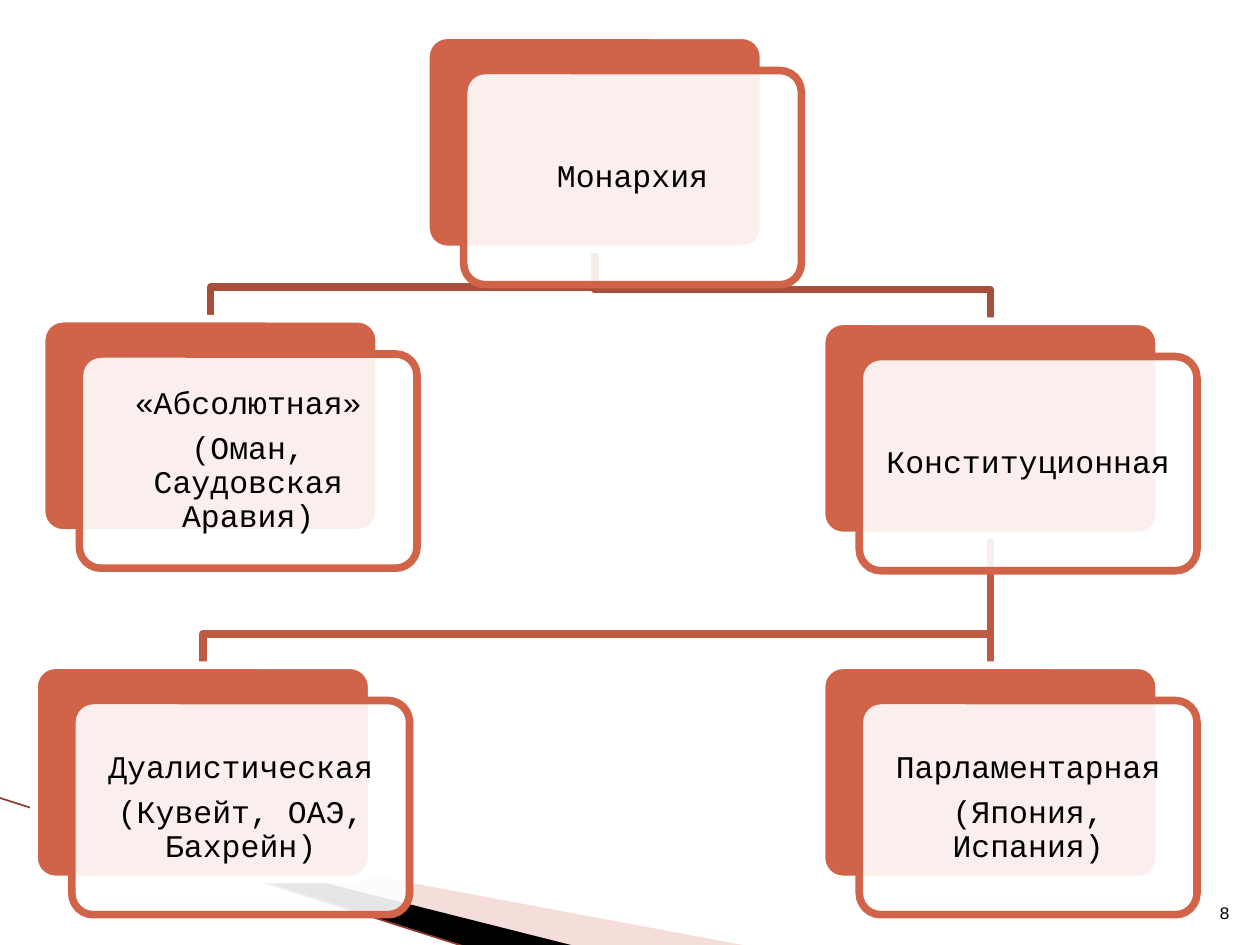
from lxml import etree
from pptx import Presentation
from pptx.dml.color import RGBColor
from pptx.enum.shapes import MSO_CONNECTOR, MSO_SHAPE
from pptx.enum.text import MSO_ANCHOR, PP_ALIGN
from pptx.oxml.ns import qn
from pptx.util import Inches, Pt

ROUNDED = MSO_SHAPE.ROUNDED_RECTANGLE
STRAIGHT = MSO_CONNECTOR.STRAIGHT
MIDDLE, BOTTOM = MSO_ANCHOR.MIDDLE, MSO_ANCHOR.BOTTOM
CENTER, RIGHT = PP_ALIGN.CENTER, PP_ALIGN.RIGHT

COLORS = {
    "card": "D16349", "white": "FFFFFF", "text": "000000", "black": "000000",
    "upper_link": "A74F3A", "lower_link": "BE5A42",
    "pink": "E7ACA4", "stripe": "8F3A2B",
}
FONT = "Courier New"
CARD_WIDTH, CARD_HEIGHT = 2.68, 1.7
SHIFT_X, SHIFT_Y = 0.3, 0.28
BEND_RISE = 0.25
LINK_WIDTH = 4.33

CARDS = {
    "monarchy": (3.38, 0.28, ["Монархия"]),
    "constitutional": (6.52, 2.55, ["Конституционная"]),
    "dualistic": (0.27, 5.28, ["Дуалистическая", "(Кувейт, ОАЭ, Бахрейн)"]),
    "parliamentary": (6.52, 5.28, ["Парламентарная", "(Япония, Испания)"]),
    "absolute": (0.33, 2.53, ["«Абсолютная»", "(Оман, Саудовская Аравия)"]),
}
BENT_LINKS = [
    ("monarchy", "absolute", "upper_link"),
    ("constitutional", "dualistic", "lower_link"),
    ("monarchy", "constitutional", "upper_link"),
]


def paint(fill, color, opacity=100):
    """Give a fill a solid colour with an opacity in percent."""
    fill.solid()
    fill.fore_color.rgb = RGBColor.from_string(COLORS[color])
    if opacity < 100:
        tint = fill._xPr.find(qn("a:solidFill"))[0]
        etree.SubElement(tint, qn("a:alpha"), val=str(opacity * 1000))


def set_line(shape, color, width):
    """Set the colour and width in points of an outline or a line."""
    shape.line.color.rgb = RGBColor.from_string(COLORS[color])
    shape.line.width = Pt(width)


def write_text(shape, lines, size=18, align=CENTER, anchor=MIDDLE, inset=0.02,
               spacing=0.9, after=6.3):
    """Fill a shape with one paragraph for each line."""
    frame = shape.text_frame
    frame.word_wrap = True
    frame.vertical_anchor = anchor
    frame.margin_left = frame.margin_right = Inches(inset)
    frame.margin_top = frame.margin_bottom = Inches(inset)
    for index, line in enumerate(lines):
        para = frame.paragraphs[0] if index == 0 else frame.add_paragraph()
        para.alignment = align
        para.line_spacing = spacing
        para.space_after = Pt(after)
        span = para.add_run()
        span.text = line
        span.font.name = FONT
        span.font.size = Pt(size)
        span.font.color.rgb = RGBColor.from_string(COLORS["text"])


def add_outline(page, points, close):
    """Draw a freeform through points given in inches."""
    corners = [(Inches(x), Inches(y)) for x, y in points]
    builder = page.shapes.build_freeform(*corners[0])
    builder.add_line_segments(corners[1:], close=close)
    shape = builder.convert_to_shape()
    shape.shadow.inherit = False
    return shape


def add_wedge(page, points, color, opacity=100):
    """Draw a filled corner wedge without an outline."""
    wedge = add_outline(page, points, True)
    paint(wedge.fill, color, opacity)
    wedge.line.fill.background()


def add_straight(page, start, end, color, width):
    """Draw a straight connector without a shadow."""
    ends = [Inches(value) for value in (*start, *end)]
    connector = page.shapes.add_connector(STRAIGHT, *ends)
    set_line(connector, color, width)
    etree.SubElement(connector._element.spPr, qn("a:effectLst"))
    return connector


def add_bent_link(page, parent, child, color):
    """Draw a bent link from the bottom of a card to the top of another."""
    parent_left, parent_top, _ = CARDS[parent]
    child_left, child_top, _ = CARDS[child]
    start_x, end_x = parent_left + CARD_WIDTH / 2, child_left + CARD_WIDTH / 2
    bend = child_top - BEND_RISE
    points = [(start_x, parent_top + CARD_HEIGHT), (start_x, bend),
              (end_x, bend), (end_x, child_top)]
    link = add_outline(page, points, False)
    link.fill.background()
    set_line(link, color, LINK_WIDTH)


def add_panel(page, left, top, fill, line, opacity=100):
    """Draw one rounded panel of a card."""
    panel = page.shapes.add_shape(ROUNDED, Inches(left), Inches(top),
                                  Inches(CARD_WIDTH), Inches(CARD_HEIGHT))
    panel.adjustments[0] = 0.1
    panel.shadow.inherit = False
    paint(panel.fill, fill, opacity)
    set_line(panel, line, LINK_WIDTH)
    return panel


def add_card(page, left, top, lines):
    """Draw a coloured panel with a shifted text panel and return the first."""
    back = add_panel(page, left, top, "card", "white")
    front = add_panel(page, left + SHIFT_X, top + SHIFT_Y, "white", "card", 90)
    write_text(front, lines)
    return back


def add_decoration(page):
    """Draw the wedges and the thin stripe in the lower corner."""
    add_wedge(page, [(0.55, 6.5), (5.95, 7.51), (4.56, 7.51)], "pink", 40)
    add_wedge(page, [(0.53, 6.49), (4.57, 7.51), (3.72, 7.52)], "black")
    add_straight(page, (-0.01, 6.33), (3.71, 7.52), "stripe", 0.95)


def add_page_number(page, number):
    """Write the page number in the lower right corner."""
    box = page.shapes.add_textbox(Inches(9.46), Inches(7.01),
                                  Inches(0.4), Inches(0.4))
    write_text(box, [number], size=10, align=RIGHT, anchor=BOTTOM, inset=0.1,
               spacing=1.0, after=0)


def main():
    """Build the slide with the kinds of monarchy."""
    deck = Presentation()
    deck.slide_width, deck.slide_height = Inches(10), Inches(7.5)
    page = deck.slides.add_slide(deck.slide_layouts[6])
    add_decoration(page)
    for parent, child, color in BENT_LINKS:
        add_bent_link(page, parent, child, color)
    backs = {name: add_card(page, *card) for name, card in CARDS.items()}
    trunk = add_straight(page, (7.86, 4.25), (7.86, 5.28), "lower_link", LINK_WIDTH)
    trunk.begin_connect(backs["constitutional"], 2)
    trunk.end_connect(backs["parliamentary"], 0)
    backs["monarchy"]._element.addprevious(trunk._element)
    add_page_number(page, "8")
    deck.save("out.pptx")


if __name__ == "__main__":
    main()
